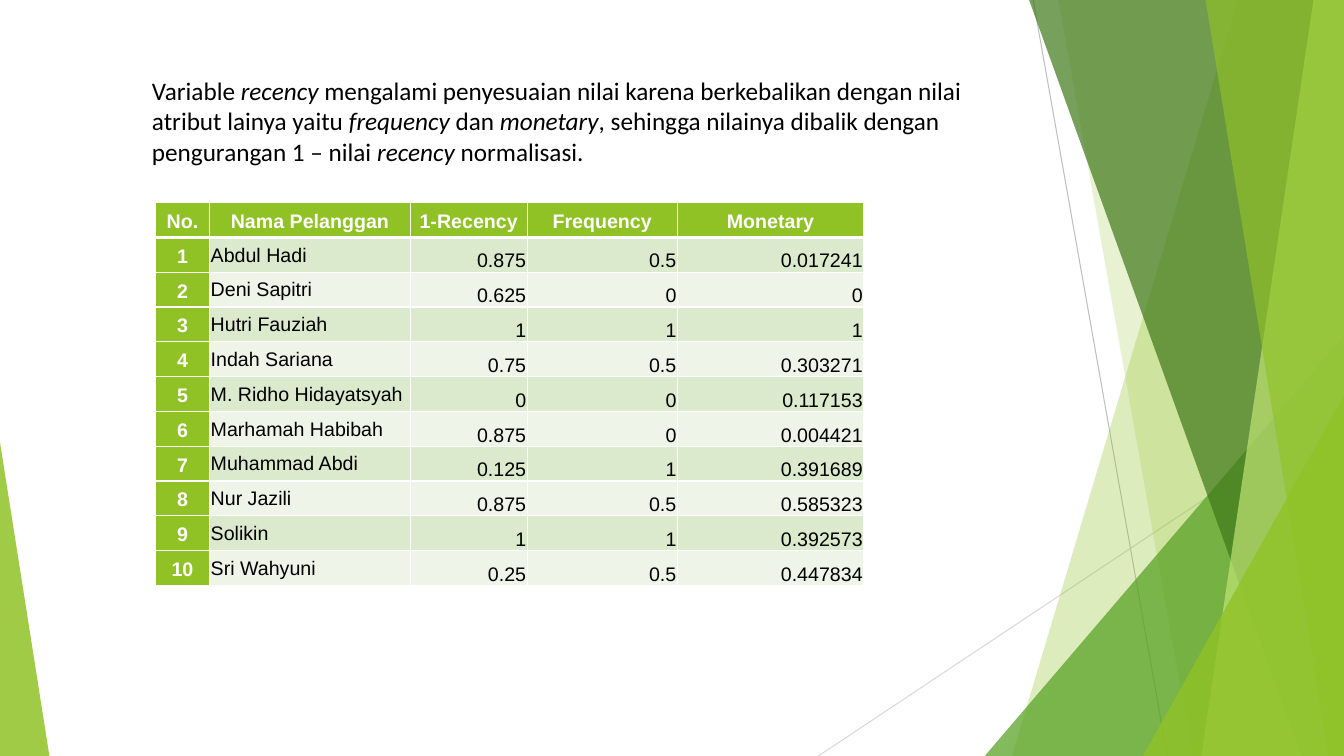
from lxml import etree
from pptx import Presentation
from pptx.dml.color import RGBColor
from pptx.enum.shapes import MSO_CONNECTOR, MSO_SHAPE
from pptx.enum.text import MSO_ANCHOR, MSO_AUTO_SIZE, PP_ALIGN
from pptx.oxml.ns import qn
from pptx.util import Pt

WIDTH, HEIGHT = 960, 540
COLOURS = {
    "lime": "90C226", "green": "54A021", "forest": "3F7819", "pale": "C0E474",
    "band_dark": "DBE9CD", "band_light": "EEF4E8", "white": "FFFFFF",
    "black": "000000", "grey": "BFBFBF", "light_grey": "D9D9D9",
}

# Each facet: x at the top, x at the bottom, colour, opacity in percent
BACK_FACETS = [(884.2, 722.9, "lime", 30), (756, 851.8, "lime", 20)]
FRONT_FACETS = [(735.1, 929.5, "forest", 70), (938.2, 858.2, "pale", 70),
                (861.1, 949, "lime", 65)]

INTRODUCTION = [
    ("Variable ", False), ("recency", True),
    (" mengalami penyesuaian nilai karena berkebalikan dengan nilai atribut lainya yaitu ", False),
    ("frequency", True), (" dan ", False), ("monetary", True),
    (", sehingga nilainya dibalik dengan pengurangan 1 – nilai", False),
    (" recency", True), (" normalisasi.", False),
]

HEADINGS = ["No.", "Nama Pelanggan", "1-Recency", "Frequency", "Monetary"]
COLUMN_WIDTHS = [38.9, 143.3, 83.5, 107.3, 133.2]
CUSTOMERS = [
    ("Abdul Hadi", "0.875", "0.5", "0.017241"),
    ("Deni Sapitri", "0.625", "0", "0"),
    ("Hutri Fauziah", "1", "1", "1"),
    ("Indah Sariana", "0.75", "0.5", "0.303271"),
    ("M. Ridho Hidayatsyah", "0", "0", "0.117153"),
    ("Marhamah Habibah", "0.875", "0", "0.004421"),
    ("Muhammad Abdi", "0.125", "1", "0.391689"),
    ("Nur Jazili", "0.875", "0.5", "0.585323"),
    ("Solikin", "1", "1", "0.392573"),
    ("Sri Wahyuni", "0.25", "0.5", "0.447834"),
]


def rgb(name):
    return RGBColor.from_string(COLOURS[name])


def paint(shape, colour, opacity):
    shape.shadow.inherit = False
    shape.line.fill.background()
    shape.fill.solid()
    shape.fill.fore_color.rgb = rgb(colour)
    colour_element = shape.fill._xPr.find(qn("a:solidFill"))[0]
    etree.SubElement(colour_element, qn("a:alpha"), val=str(opacity * 1000))


def add_run(paragraph, text, font, size, colour, bold=False, italic=False):
    run = paragraph.add_run()
    run.text = text
    run.font.name = font
    run.font.size = Pt(size)
    run.font.bold = bold
    run.font.italic = italic
    run.font.color.rgb = rgb(colour)


def add_thin_line(slide, start, end, colour):
    line = slide.shapes.add_connector(
        MSO_CONNECTOR.STRAIGHT, *(Pt(value) for value in (*start, *end)))
    line.line.color.rgb = rgb(colour)
    line.line.width = Pt(0.75)
    etree.SubElement(line._element.spPr, qn("a:effectLst"))


def add_facet(slide, box, top_x, bottom_x, colour, opacity):
    left, top, width, height = box
    right, bottom = left + width, top + height
    builder = slide.shapes.build_freeform(Pt(top_x), Pt(top))
    corners = [(right, top), (right, bottom), (bottom_x, bottom)]
    builder.add_line_segments([(Pt(x), Pt(y)) for x, y in corners], close=True)
    paint(builder.convert_to_shape(), colour, opacity)


def add_wedge(slide, box, apex, colour, opacity):
    wedge = slide.shapes.add_shape(
        MSO_SHAPE.ISOSCELES_TRIANGLE, *(Pt(value) for value in box))
    wedge.adjustments[0] = apex
    paint(wedge, colour, opacity)


def add_decoration(slide, box):
    left, top, width, height = box
    right, bottom = left + width, top + height
    # Thin crossing lines
    add_thin_line(slide, (738, top), (833.8, bottom), "grey")
    add_thin_line(slide, (right, 290.2), (584.6, bottom), "light_grey")
    # Overlapping facets on the right
    for facet in BACK_FACETS:
        add_facet(slide, box, *facet)
    add_wedge(slide, (703.4, 240, right - 703.4, bottom - 240), 1, "green", 72)
    for facet in FRONT_FACETS:
        add_facet(slide, box, *facet)
    add_wedge(slide, (816.5, 283, right - 816.5, bottom - 283), 1, "lime", 80)
    # Sliver on the left
    add_wedge(slide, (left, 316, 35.3, bottom - 316), 0, "lime", 85)


def add_introduction(slide, box):
    text_box = slide.shapes.add_textbox(*(Pt(value) for value in box))
    frame = text_box.text_frame
    frame.word_wrap = True
    frame.auto_size = MSO_AUTO_SIZE.SHAPE_TO_FIT_TEXT
    for text, italic in INTRODUCTION:
        add_run(frame.paragraphs[0], text, "Calibri", 18, "black", italic=italic)


def set_borders(cell, top_width, bottom_width):
    properties = cell._tc.get_or_add_tcPr()
    widths = {"a:lnL": 1, "a:lnR": 1, "a:lnT": top_width, "a:lnB": bottom_width}
    for position, (tag, width) in enumerate(widths.items()):
        line = etree.Element(qn(tag), w=str(Pt(width)))
        fill = etree.SubElement(line, qn("a:solidFill"))
        etree.SubElement(fill, qn("a:srgbClr"), val=COLOURS["white"])
        properties.insert(position, line)


def fill_cell(cell, text, row, column):
    is_label = row == 0 or column == 0
    paragraph = cell.text_frame.paragraphs[0]
    cell.fill.solid()
    if is_label:
        cell.fill.fore_color.rgb = rgb("lime")
        cell.margin_left = cell.margin_right = Pt(5.04)
        cell.margin_top = cell.margin_bottom = 0
        paragraph.alignment = PP_ALIGN.CENTER
        paragraph.line_spacing = 1.15
    else:
        cell.fill.fore_color.rgb = rgb("band_dark" if row % 2 else "band_light")
        cell.margin_left = cell.margin_right = cell.margin_top = Pt(0.72)
        cell.margin_bottom = 0
        paragraph.alignment = PP_ALIGN.LEFT if column == 1 else PP_ALIGN.RIGHT
    is_value = not is_label and column > 1
    cell.vertical_anchor = MSO_ANCHOR.BOTTOM if is_value else MSO_ANCHOR.MIDDLE
    add_run(paragraph, text, "Arial", 14, "white" if is_label else "black", bold=is_label)
    set_borders(cell, 3 if row == 1 else 1, 3 if row == 0 else 1)


def add_customer_table(slide, box):
    rows = [HEADINGS] + [(str(number), *customer)
                         for number, customer in enumerate(CUSTOMERS, 1)]
    table = slide.shapes.add_table(
        len(rows), len(HEADINGS), *(Pt(value) for value in box)).table
    table.first_row = table.horz_banding = False
    for column, width in zip(table.columns, COLUMN_WIDTHS):
        column.width = Pt(width)
    for row_index, values in enumerate(rows):
        table.rows[row_index].height = Pt(box[3] / len(rows))
        for column_index, text in enumerate(values):
            fill_cell(table.cell(row_index, column_index), text, row_index, column_index)


def build_slide(presentation):
    slide = presentation.slides.add_slide(presentation.slide_layouts[6])
    add_decoration(slide, (0, 0, WIDTH, HEIGHT))
    add_customer_table(slide, (110.9, 144.7, sum(COLUMN_WIDTHS), 273.5))
    add_introduction(slide, (101.5, 50.4, 645.1, 72.7))


def main():
    presentation = Presentation()
    presentation.slide_width = Pt(WIDTH)
    presentation.slide_height = Pt(HEIGHT)
    build_slide(presentation)
    presentation.save("out.pptx")


if __name__ == "__main__":
    main()
